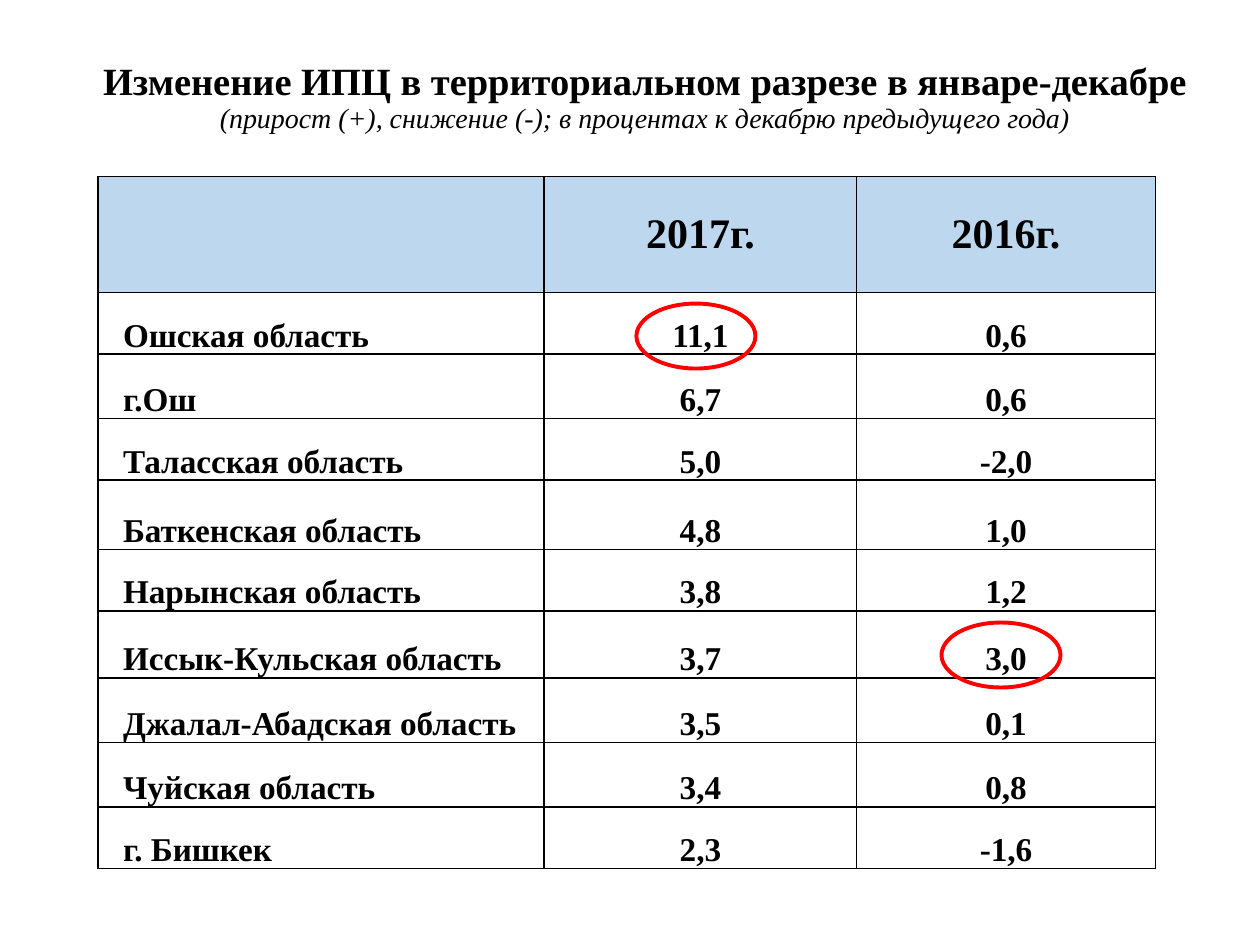
from lxml.etree import SubElement
from pptx import Presentation
from pptx.dml.color import RGBColor as Rgb
from pptx.enum.shapes import MSO_SHAPE as Preset
from pptx.enum.text import MSO_ANCHOR as Anchor, PP_ALIGN as Align
from pptx.oxml.ns import qn
from pptx.util import Cm, Pt

COLORS = {"ink": "000000", "header": "BDD7EE", "ring": "FF0000"}
YEARS = ["", "2017г.", "2016г."]
REGIONS = [
    ("Ошская область", "11,1", "0,6", 1.24),
    ("г.Ош", "6,7", "0,6", 1.3),
    ("Таласская область", "5,0", "-2,0", 1.24),
    ("Баткенская область", "4,8", "1,0", 1.4),
    ("Нарынская область", "3,8", "1,2", 1.24),
    ("Иссык-Кульская область", "3,7", "3,0", 1.35),
    ("Джалал-Абадская область", "3,5", "0,1", 1.3),
    ("Чуйская область", "3,4", "0,8", 1.3),
    ("г. Бишкек", "2,3", "-1,6", 1.24),
]
COLUMN_WIDTHS = [8.99, 6.3, 6.02]
HEADER_HEIGHT = 2.34
LABEL_INDENT = 0.5


def write(paragraph, text, size=19, bold=True, italic=False, align=Align.CENTER, after=0):
    """Add formatted text to a paragraph."""
    paragraph.alignment = align
    paragraph.space_after = Pt(after)
    run = paragraph.add_run()
    run.text = text
    font = run.font
    font.name, font.size = "Times New Roman", Pt(size)
    font.bold, font.italic = bold, italic
    font.color.rgb = Rgb.from_string(COLORS["ink"])


class SlideBuilder:
    """Holds the style and the current slide, and adds its elements."""

    def __init__(self, slide, colors):
        self.slide = slide
        self.colors = colors

    def title(self, heading, note, left, top, width, height):
        frame = self.slide.shapes.add_textbox(Cm(left), Cm(top), Cm(width), Cm(height)).text_frame
        frame.word_wrap = True
        frame.vertical_anchor = Anchor.MIDDLE
        line = frame.paragraphs[0]
        line.line_spacing = 0.9
        write(line, heading, size=22)
        line.add_line_break()
        write(line, note, size=16, bold=False, italic=True)

    def border(self, cell):
        properties = cell._tc.get_or_add_tcPr()
        for side in ("a:lnL", "a:lnR", "a:lnT", "a:lnB"):
            edge = SubElement(properties, qn(side), w=str(Pt(1)))
            fill = SubElement(edge, qn("a:solidFill"))
            SubElement(fill, qn("a:srgbClr"), val=self.colors["ink"])

    def header_cell(self, cell, year):
        self.border(cell)
        cell.fill.solid()
        cell.fill.fore_color.rgb = Rgb.from_string(self.colors["header"])
        cell.vertical_anchor = Anchor.MIDDLE
        if year:
            write(cell.text_frame.paragraphs[0], year, size=24)

    def body_cell(self, cell, text, is_label):
        self.border(cell)
        cell.fill.background()
        cell.vertical_anchor = Anchor.BOTTOM
        cell.margin_left = Cm(LABEL_INDENT if is_label else 0)
        cell.margin_right = cell.margin_top = cell.margin_bottom = 0
        align = Align.LEFT if is_label else Align.CENTER
        write(cell.text_frame.paragraphs[0], text, align=align, after=2)

    def table(self, header, regions, left, top):
        heights = [HEADER_HEIGHT] + [region[-1] for region in regions]
        table = self.slide.shapes.add_table(
            len(heights), len(header), Cm(left), Cm(top),
            Cm(sum(COLUMN_WIDTHS)), Cm(sum(heights))).table
        table.horz_banding = False
        for column, width in zip(table.columns, COLUMN_WIDTHS):
            column.width = Cm(width)
        for row, height in zip(table.rows, heights):
            row.height = Cm(height)
        for index, year in enumerate(header):
            self.header_cell(table.cell(0, index), year)
        for row, (*values, _) in enumerate(regions, 1):
            for index, value in enumerate(values):
                self.body_cell(table.cell(row, index), value, is_label=index == 0)

    def ring(self, left, top, width=2.4, height=1.31):
        ring = self.slide.shapes.add_shape(
            Preset.OVAL, Cm(left), Cm(top), Cm(width), Cm(height))
        ring.shadow.inherit = False
        ring.fill.background()
        ring.line.color.rgb = Rgb.from_string(self.colors["ring"])
        ring.line.width = Pt(2.25)


def main():
    deck = Presentation()
    deck.slide_width, deck.slide_height = Cm(25.4), Cm(19.05)
    builder = SlideBuilder(deck.slides.add_slide(deck.slide_layouts[6]), COLORS)
    builder.title("Изменение ИПЦ в территориальном разрезе в январе-декабре",
                  "(прирост (+), снижение (-); в процентах к декабрю предыдущего года)",
                  1.57, 1.09, 22.86, 1.78)
    builder.table(YEARS, REGIONS, 1.98, 3.56)
    for left, top in ((12.83, 6.12), (18.98, 12.55)):
        builder.ring(left, top)
    deck.save("out.pptx")


if __name__ == "__main__":
    main()
